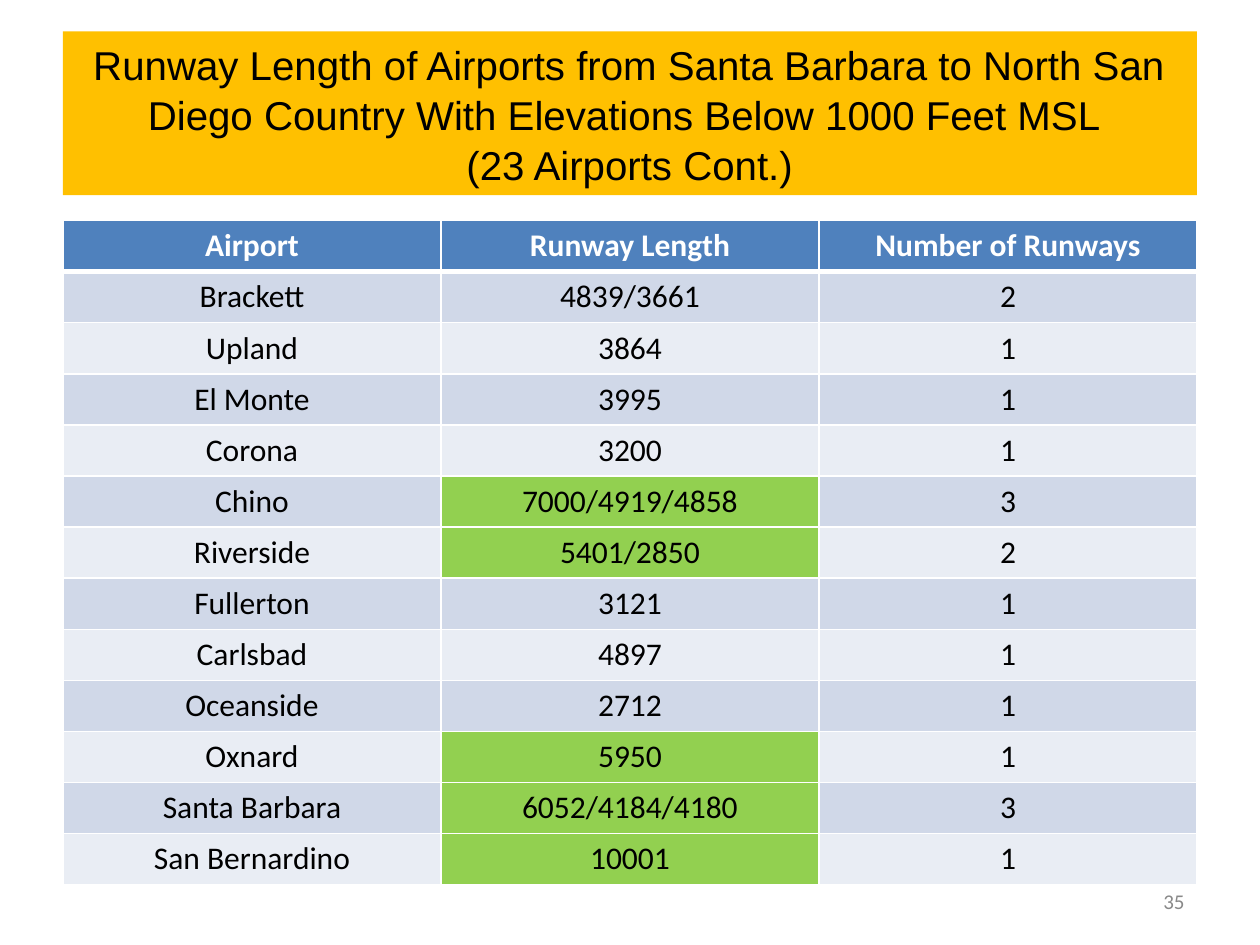
import pptx
import pptx.dml.color
import pptx.enum.shapes
import pptx.enum.text
import pptx.oxml
import pptx.oxml.ns
import pptx.util

Pt = pptx.util.Pt
Align = pptx.enum.text.PP_ALIGN
Anchor = pptx.enum.text.MSO_ANCHOR

# Content
TITLE = ("Runway Length of Airports from Santa Barbara to North San Diego Country "
         "With Elevations Below 1000 Feet MSL \v(23 Airports Cont.)")
PAGE_NUMBER = "35"
HEADINGS = ("Airport", "Runway Length", "Number of Runways")
AIRPORTS = [
    ("Brackett", "4839/3661", "2"),
    ("Upland", "3864", "1"),
    ("El Monte", "3995", "1"),
    ("Corona", "3200", "1"),
    ("Chino", "7000/4919/4858", "3"),
    ("Riverside", "5401/2850", "2"),
    ("Fullerton", "3121", "1"),
    ("Carlsbad", "4897", "1"),
    ("Oceanside", "2712", "1"),
    ("Oxnard", "5950", "1"),
    ("Santa Barbara", "6052/4184/4180", "3"),
    ("San Bernardino", "10001", "1"),
]
LONG_RUNWAY = 5000  # feet; lengths from here up are highlighted

# Colours and type
THEME = {
    "banner": "FFC000", "header": "4F81BD", "bands": ("D0D8E8", "E9EDF4"),
    "highlight": "92D050", "rule": "FFFFFF",
    "title": {"name": "Arial", "size": Pt(23), "color": "000000"},
    "heading": {"name": "Calibri", "size": Pt(18), "bold": True, "color": "FFFFFF"},
    "body": {"name": "Calibri", "size": Pt(18), "bold": False, "color": "000000"},
    "number": {"name": "Calibri", "size": Pt(12), "color": "898989"},
}

# Layout, in points
MARGIN, CONTENT_WIDTH = 36, 648
TABLE_TOP, ROW_HEIGHT = 126, 29.19
THIN, THICK = 1, 3


def rgb(value):
    return pptx.dml.color.RGBColor.from_string(value)


def paint(part, color):
    part.fill.solid()
    part.fill.fore_color.rgb = rgb(color)


def write(frame, text, style, alignment):
    para = frame.paragraphs[0]
    para.text = text
    para.alignment = alignment
    for span in para.runs:
        for name, value in style.items():
            if name == "color":
                span.font.color.rgb = rgb(value)
            else:
                setattr(span.font, name, value)
    return para


def add_borders(cell, widths):
    properties = cell._tc.get_or_add_tcPr()
    for side in "LRTB":
        width = int(Pt(widths.get(side, THIN)))
        properties.append(pptx.oxml.parse_xml(
            f'<a:ln{side} {pptx.oxml.ns.nsdecls("a")} w="{width}"><a:solidFill>'
            f'<a:srgbClr val="{THEME["rule"]}"/></a:solidFill></a:ln{side}>'))


def cell_fill(row, column, text):
    if row == 0:
        return THEME["header"]
    if column == 1 and max(map(int, text.split("/"))) >= LONG_RUNWAY:
        return THEME["highlight"]
    return THEME["bands"][(row - 1) % 2]


def add_title(page):
    box = page.shapes.add_shape(pptx.enum.shapes.MSO_SHAPE.RECTANGLE,
                                Pt(MARGIN), Pt(18), Pt(CONTENT_WIDTH), Pt(93.6))
    box.shadow.inherit = False
    box.line.fill.background()
    paint(box, THEME["banner"])
    box.text_frame.word_wrap = True
    box.text_frame.vertical_anchor = Anchor.MIDDLE
    para = write(box.text_frame, TITLE, THEME["title"], Align.CENTER)
    para.line_spacing = 1.04


def add_airport_table(page):
    rows = [HEADINGS, *AIRPORTS]
    frame = page.shapes.add_table(len(rows), len(HEADINGS), Pt(MARGIN), Pt(TABLE_TOP),
                                  Pt(CONTENT_WIDTH), Pt(ROW_HEIGHT * len(rows)))
    table = frame.table
    for column in table.columns:
        column.width = Pt(CONTENT_WIDTH / len(HEADINGS))
    for r, values in enumerate(rows):
        table.rows[r].height = Pt(ROW_HEIGHT)
        # The rule below the header is heavier than the others
        widths = {0: {"B": THICK}, 1: {"T": THICK}}.get(r, {})
        style = THEME["body" if r else "heading"]
        for c, text in enumerate(values):
            cell = table.cell(r, c)
            add_borders(cell, widths)
            paint(cell, cell_fill(r, c, text))
            write(cell.text_frame, text, style, Align.CENTER)


def add_page_number(page):
    box = page.shapes.add_textbox(Pt(516), Pt(500.5), Pt(168), Pt(28.75))
    box.text_frame.word_wrap = True
    box.text_frame.vertical_anchor = Anchor.MIDDLE
    write(box.text_frame, PAGE_NUMBER, THEME["number"], Align.RIGHT)


def main():
    deck = pptx.Presentation()
    deck.slide_width, deck.slide_height = Pt(720), Pt(540)
    page = deck.slides.add_slide(deck.slide_layouts[6])
    add_title(page)
    add_airport_table(page)
    add_page_number(page)
    deck.save("out.pptx")


if __name__ == "__main__":
    main()
